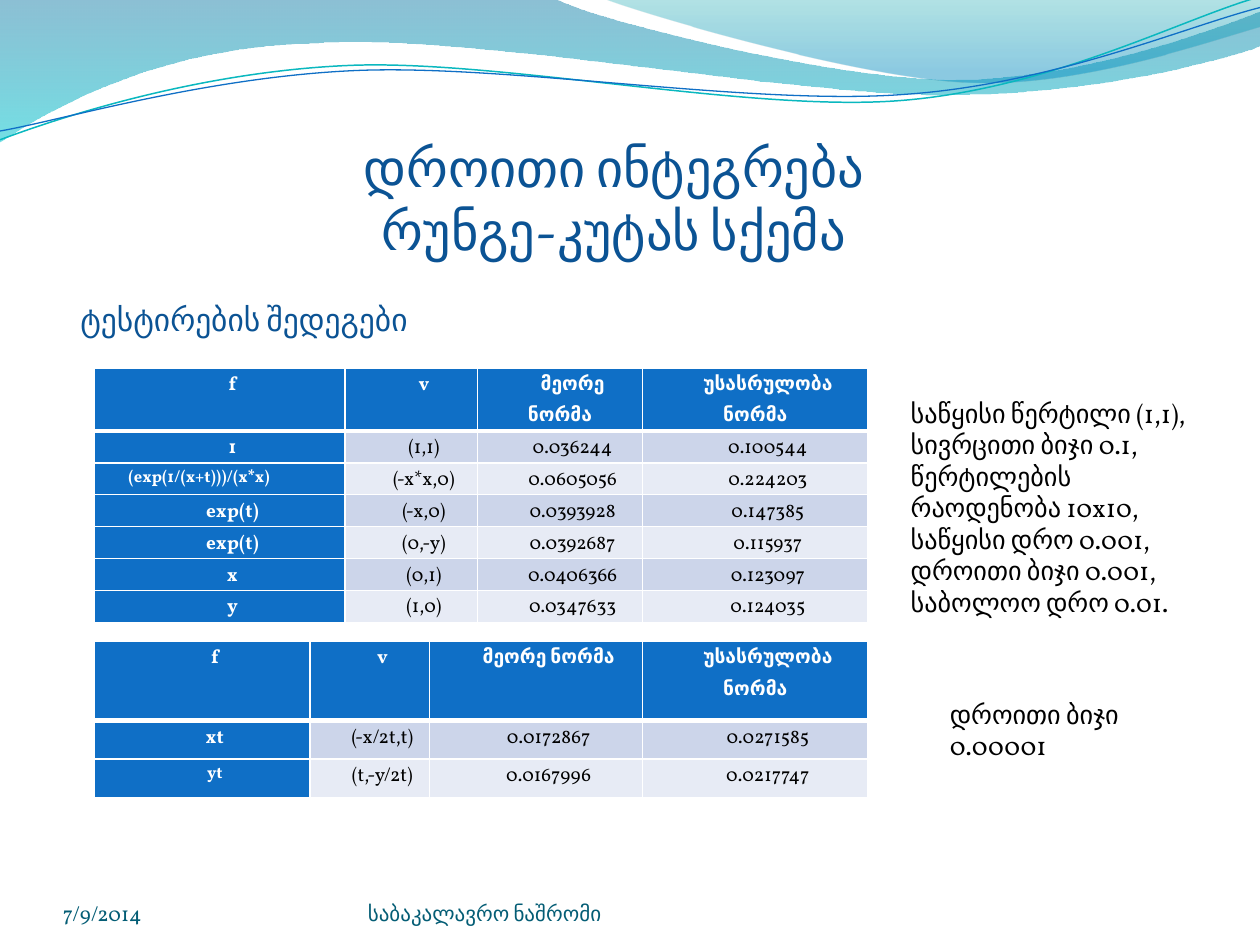
from lxml import etree
from pptx import Presentation
from pptx.dml.color import RGBColor
from pptx.enum import text
from pptx.oxml.ns import qn
from pptx.util import Inches, Pt

FONT = "Vollkorn"
WHITE = RGBColor(0xFF, 0xFF, 0xFF)
BLACK = RGBColor(0, 0, 0)
BLUE = RGBColor(0x0F, 0x6F, 0xC6)
TEAL = RGBColor(0x0A, 0xB8, 0xBF)
TITLE_BLUE = RGBColor(0x0B, 0x53, 0x94)
FOOTER = RGBColor(0x04, 0x5D, 0x75)
BANDS = RGBColor(0xCC, 0xD5, 0xEA), RGBColor(0xE7, 0xEB, 0xF5)
WAVE_BLUE, WAVE_CYAN = RGBColor(0, 0x74, 0xA1), RGBColor(0, 0xC6, 0xCF)
CREST_TEAL, CREST_BLUE = RGBColor(0, 0xA1, 0xA9), RGBColor(0, 0x8B, 0xBF)

HEADER = ["f", "v", "მეორე ნორმა", "უსასრულობა ნორმა"]
LONG_FORMULA = "(exp(1/(x+t)))/(x*x)"
SMALL_TEXT = {LONG_FORMULA, "yt"}
STATIONARY = [
    HEADER,
    ["1", "(1,1)", "0.036244", "0.100544"],
    [LONG_FORMULA, "(-x*x,0)", "0.0605056", "0.224203"],
    ["exp(t)", "(-x,0)", "0.0393928", "0.147385"],
    ["exp(t)", "(0,-y)", "0.0392687", "0.115937"],
    ["x", "(0,1)", "0.0406366", "0.123097"],
    ["y", "(1,0)", "0.0347633", "0.124035"],
]
TIME_DEPENDENT = [
    HEADER,
    ["xt", "(-x/2t,t)", "0.0172867", "0.0271585"],
    ["yt", "(t,-y/2t)", "0.0167996", "0.0217747"],
]


def add_outline(slide, start, parts, close):
    """Each part is (x, y) for a line or (x1, y1, x2, y2, x, y) for a curve."""
    points = [pair for part in parts for pair in zip(part[::2], part[1::2])]
    builder = slide.shapes.build_freeform(*map(Inches, start))
    builder.add_line_segments([tuple(map(Inches, p)) for p in points], close=close)
    sp = builder.convert_to_shape()
    sp.shadow.inherit = False
    # Join the three points of every curve into one cubic segment
    segments = iter(list(sp._element.iter(qn("a:lnTo"))))
    for part in parts:
        first = next(segments)
        if len(part) == 6:
            first.tag = qn("a:cubicBezTo")
            for _ in range(2):
                extra = next(segments)
                first.append(extra[0])
                extra.getparent().remove(extra)
    return sp


def add_wave(slide, start, parts, stops):
    """A gradient shape; stops hold position, colour and opacity in percent."""
    sp = add_outline(slide, start, parts, True)
    sp.line.fill.background()
    sp.fill.gradient()
    sp.fill.gradient_angle = 270
    for stop, (position, color, _) in zip(sp.fill.gradient_stops, stops):
        stop.position = position
        stop.color.rgb = color
    colors = sp._element.spPr.iter(qn("a:srgbClr"))
    for color, (_, _, opacity) in zip(list(colors), stops):
        etree.SubElement(color, qn("a:alpha"), val=str(opacity * 1000))


def add_wave_line(slide, start, parts, color, width):
    sp = add_outline(slide, start, parts, False)
    sp.fill.background()
    sp.line.color.rgb = color
    sp.line.width = Pt(width)


def style(p, size, color, bold=False):
    p.font.name = FONT
    p.font.size = Pt(size)
    p.font.color.rgb = color
    p.font.bold = bold


def add_text(slide, box, lines, size, color, align=text.PP_ALIGN.LEFT, footer=False):
    tf = slide.shapes.add_textbox(*map(Inches, box)).text_frame
    tf.word_wrap = True
    if footer:
        tf.vertical_anchor = text.MSO_ANCHOR.BOTTOM
        tf.margin_left = tf.margin_right = tf.margin_top = tf.margin_bottom = 0
    else:
        tf.auto_size = text.MSO_AUTO_SIZE.SHAPE_TO_FIT_TEXT
    for i, line in enumerate(lines):
        p = tf.add_paragraph() if i else tf.paragraphs[0]
        p.text = line
        p.alignment = align
        style(p, size, color)


def set_borders(cell, widths):
    """White borders; widths run left, right, top, bottom."""
    tc_pr = cell._tc.get_or_add_tcPr()
    for i, (side, width) in enumerate(zip("LRTB", widths)):
        ln = etree.Element(qn(f"a:ln{side}"), w=str(Pt(width)))
        fill = etree.SubElement(ln, qn("a:solidFill"))
        etree.SubElement(fill, qn("a:srgbClr"), val=str(WHITE))
        tc_pr.insert(i, ln)


def fill_cell(cell, value, row, col):
    is_head = row == 0 or col == 0
    cell.fill.solid()
    cell.fill.fore_color.rgb = BLUE if is_head else BANDS[(row - 1) % 2]
    cell.margin_left = cell.margin_right = Inches(0.07)
    cell.margin_top = cell.margin_bottom = 0
    set_borders(cell, (1, 1, 3 if row == 1 else 1, 3 if row == 0 else 1))
    p = cell.text_frame.paragraphs[0]
    p.text = value
    p.alignment = text.PP_ALIGN.LEFT if value == LONG_FORMULA else text.PP_ALIGN.CENTER
    p.line_spacing = 1.15
    p_pr = p._p.get_or_add_pPr()
    p_pr.set("marL", "0")
    p_pr.set("indent", str(Inches(0.2)))
    style(p, 9.5 if value in SMALL_TEXT else 11, WHITE if is_head else BLACK, is_head)


def add_results(slide, top, height, header_height, widths, rows):
    table = slide.shapes.add_table(
        len(rows), len(widths), Inches(0.75), Inches(top),
        Inches(sum(widths)), Inches(height)).table
    table.first_col = True
    for column, width in zip(table.columns, widths):
        column.width = Inches(width)
    body_height = (height - header_height) / (len(rows) - 1)
    for r, values in enumerate(rows):
        table.rows[r].height = Inches(body_height if r else header_height)
        for c, value in enumerate(values):
            fill_cell(table.cell(r, c), value, r, c)


def main():
    prs = Presentation()
    prs.slide_width, prs.slide_height = Inches(10), Inches(7.5)
    slide = prs.slides.add_slide(prs.slide_layouts[6])

    # Waves along the top
    add_wave(slide, (0, 0), [
        (4.4, -0.01), (4.76, 0.17, 6.64, 0.63, 7.58, 0.63),
        (8.53, 0.63, 9.58, 0.26, 10, 0.09), (10.01, 0.36),
        (9.83, 0.44, 8.7, 0.76, 7.46, 0.75), (6.22, 0.75, 3.82, 0.28, 2.57, 0.34),
        (1.29, 0.36, 0.46, 0.83, -0.01, 1.13), (0, 0),
    ], [(0, WAVE_BLUE, 45), (1, WAVE_CYAN, 55)])
    add_wave(slide, (4.79, -0.01), [
        (5.09, 0.11, 6.82, 0.62, 7.69, 0.65), (8.56, 0.69, 9.61, 0.32, 10, 0.21),
        (10, 0), (4.79, -0.01),
    ], [(0, CREST_TEAL, 30), (0.8, CREST_BLUE, 45)])
    add_wave_line(slide, (0, 1.11), [
        (0.48, 0.93, 1.58, 0.57, 2.77, 0.52), (3.95, 0.47, 5.93, 0.89, 7.13, 0.8),
        (8.33, 0.71, 9.38, 0.15, 9.98, -0.02)], TEAL, 0.85)
    add_wave_line(slide, (0, 1.04), [
        (0.47, 0.96, 1.64, 0.61, 2.83, 0.56), (4.03, 0.51, 5.97, 0.84, 7.17, 0.75),
        (8.36, 0.67, 9.41, 0.21, 10, 0.06)], BLUE, 0.75)

    # Title, footer and subtitle
    add_text(slide, (1.25, 1.02, 7.25, 1.11), ["დროითი ინტეგრება", "რუნგე-კუტას სქემა"],
             30, TITLE_BLUE, text.PP_ALIGN.CENTER)
    add_text(slide, (0.5, 6.95, 2.33, 0.4), ["7/9/2014"], 12, FOOTER, footer=True)
    add_text(slide, (2.92, 6.95, 3.67, 0.4), ["საბაკალავრო ნაშრომი"], 12, FOOTER,
             footer=True)
    add_text(slide, (0.54, 2.33, 4.33, 0.4), ["ტესტირების შედეგები"], 18, TITLE_BLUE)

    # Notes beside the tables
    add_text(slide, (7.13, 3.1, 2.64, 1.62), [
        "საწყისი წერტილი (1,1), სივრცითი ბიჯი 0.1, წერტილების რაოდენობა 10x10, "
        "საწყისი დრო 0.001, დროითი ბიჯი 0.001, საბოლოო დრო 0.01."], 15, BLACK)
    add_text(slide, (7.44, 5.49, 1.89, 0.61), ["დროითი ბიჯი 0.00001"], 15, BLACK)

    # Result tables
    add_results(slide, 2.92, 2.02, 0.5, [1.99, 1.05, 1.31, 1.79], STATIONARY)
    add_results(slide, 5.09, 1.24, 0.63, [1.71, 0.95, 1.69, 1.79], TIME_DEPENDENT)

    prs.save("out.pptx")


if __name__ == "__main__":
    main()
